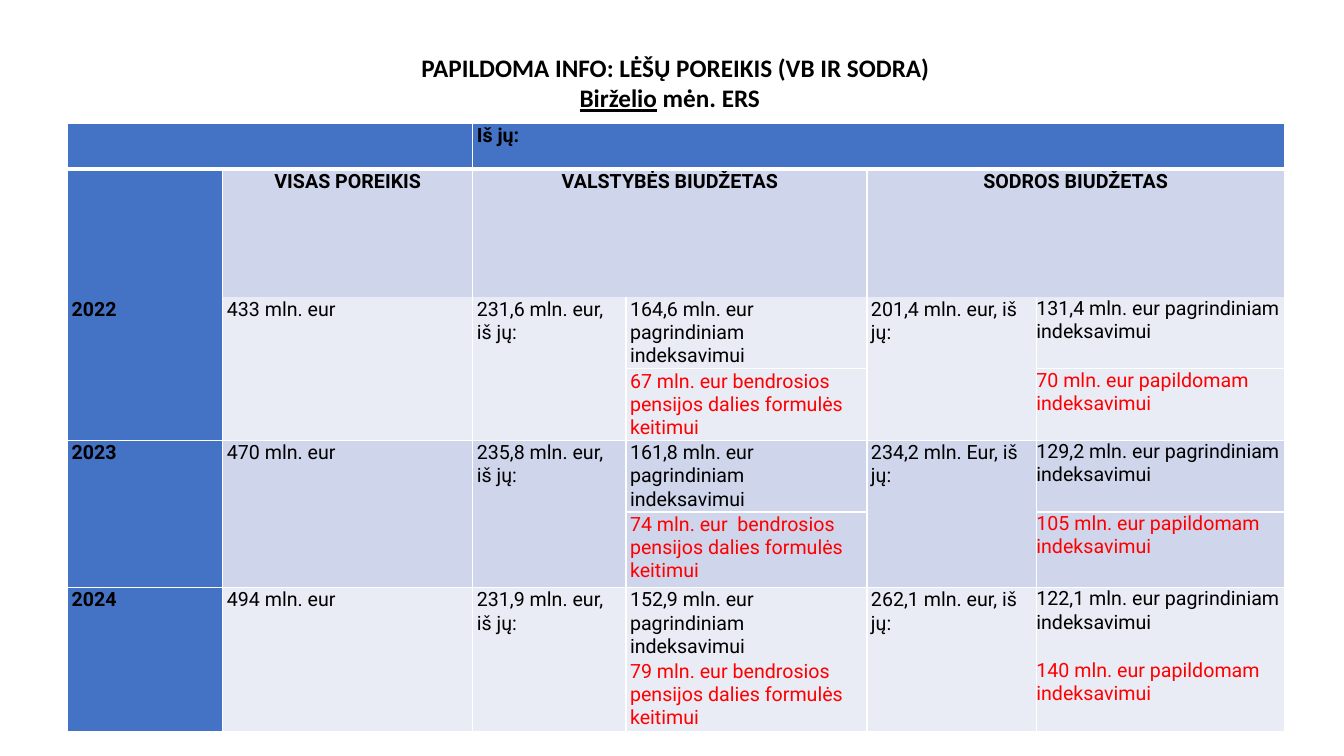
"""Build the slide on the funds needed from the state and social insurance budgets."""
from dataclasses import dataclass

from lxml.etree import SubElement
from pptx import Presentation
from pptx.dml.color import RGBColor
from pptx.enum.text import MSO_ANCHOR, MSO_AUTO_SIZE, PP_ALIGN
from pptx.oxml.ns import qn
from pptx.table import Table, _Cell
from pptx.util import Inches, Pt

BLACK = RGBColor(0x00, 0x00, 0x00)
WHITE = RGBColor(0xFF, 0xFF, 0xFF)
RED = RGBColor(0xFF, 0x00, 0x00)
BLUE = RGBColor(0x44, 0x72, 0xC4)
BAND = RGBColor(0xCF, 0xD5, 0xEA)
LIGHT = RGBColor(0xE9, 0xEB, 0xF5)

COL_WIDTHS = [1.54, 2.41, 0.07, 1.52, 2.39, 1.68, 2.46]
ROW_HEIGHTS = [0.46, 1.27, 0.71, 0.71, 0.71, 0.75, 0.71, 0.71, 0.21]
ROW_RULES = [1, 3, 0, 1, 1, 1, 1, 0, 0, 0]


@dataclass(frozen=True)
class Block:
    """A cell, or a merged group of cells, with its look."""
    row: int
    col: int
    text: str
    fill: RGBColor
    rows: int = 1
    cols: int = 1
    color: RGBColor = BLACK
    bold: bool = False
    align: PP_ALIGN = PP_ALIGN.LEFT


@dataclass(frozen=True)
class Year:
    """The amounts of one year, shown on two table rows."""
    name: str
    total: str
    state: str
    state_main: str
    state_extra: str
    social: str
    social_main: str
    social_extra: str
    fill: RGBColor


MAIN = "mln. eur pagrindiniam indeksavimui"
PENSION = "bendrosios pensijos dalies formulės keitimui"
EXTRA = "mln. eur papildomam indeksavimui"

YEARS = [
    Year("2022", "433", "231,6 mln. eur", "164,6", "67 mln. eur ",
         "201,4 mln. eur", "131,4", "70", LIGHT),
    Year("2023", "470", "235,8 mln. eur", "161,8", "74 mln. eur  ",
         "234,2 mln. Eur", "129,2", "105", BAND),
    Year("2024", "494", "231,9 mln. eur", "152,9", "79 mln. eur ",
         "262,1 mln. eur", "122,1", "140", LIGHT),
]


def header_blocks() -> list[Block]:
    """Return the two heading rows and the blank closing row."""
    heads = [(1, "VISAS POREIKIS"), (3, "VALSTYBĖS BIUDŽETAS"), (5, "SODROS BIUDŽETAS")]
    return [
        Block(0, 0, "", BLUE, cols=3),
        Block(0, 3, "Iš jų:", BLUE, cols=4, bold=True),
        Block(1, 0, "", BLUE),
        *(Block(1, col, text, BAND, cols=2, bold=True, align=PP_ALIGN.CENTER)
          for col, text in heads),
        *(Block(8, col, "", WHITE) for col in range(len(COL_WIDTHS))),
    ]


def year_blocks(row: int, year: Year) -> list[Block]:
    """Return the cells of one year, starting at the given row."""
    return [
        Block(row, 0, year.name, BLUE, rows=2, bold=True),
        Block(row, 1, f"{year.total} mln. eur", year.fill, rows=2, cols=2),
        Block(row, 3, f"{year.state}, iš jų:", year.fill, rows=2),
        Block(row, 4, f"{year.state_main} {MAIN}", year.fill),
        Block(row + 1, 4, f"{year.state_extra}{PENSION}", year.fill, color=RED),
        Block(row, 5, f"{year.social}, iš jų:", year.fill, rows=2),
        Block(row, 6, f"{year.social_main} {MAIN}", year.fill),
        Block(row + 1, 6, f"{year.social_extra} {EXTRA}", year.fill, color=RED),
    ]


def set_borders(cell: _Cell, top: int, bottom: int) -> None:
    """Draw white borders in points; a width of zero draws none."""
    tc_pr = cell._tc.get_or_add_tcPr()
    for side, width in zip("LRTB", (1, 1, top, bottom)):
        ln = SubElement(tc_pr, qn(f"a:ln{side}"), w=str(Pt(width)))
        if width:
            fill = SubElement(ln, qn("a:solidFill"))
            SubElement(fill, qn("a:srgbClr"), val=str(WHITE))
        else:
            SubElement(ln, qn("a:noFill"))


def draw_block(table: Table, block: Block) -> None:
    """Merge, fill, border and write one block."""
    end_row, end_col = block.row + block.rows, block.col + block.cols
    for row in range(block.row, end_row):
        for col in range(block.col, end_col):
            cell = table.cell(row, col)
            set_borders(cell, ROW_RULES[block.row], ROW_RULES[end_row])
            cell.fill.solid()
            cell.fill.fore_color.rgb = block.fill
    cell = table.cell(block.row, block.col)
    if block.rows * block.cols > 1:
        cell.merge(table.cell(end_row - 1, end_col - 1))
    flush = block.col == 6 or not block.text
    cell.margin_left = cell.margin_right = Inches(0 if flush else 0.04)
    cell.margin_top = Inches(0 if flush else 0.01)
    cell.margin_bottom = Inches(0)
    p = cell.text_frame.paragraphs[0]
    p.text = block.text
    p.alignment = block.align
    if not block.text:
        SubElement(p._p, qn("a:endParaRPr"), sz="1000")
    for r in p.runs:
        r.font.name = "Roboto"
        r.font.size = Pt(14)
        r.font.bold = block.bold
        r.font.color.rgb = block.color


def main() -> None:
    """Build and save the slide."""
    prs = Presentation()
    prs.slide_width, prs.slide_height = Inches(13.33), Inches(7.5)
    s = prs.slides.add_slide(prs.slide_layouts[5])

    title = s.shapes.title
    title.left, title.top = Inches(0.67), Inches(0.47)
    title.width, title.height = Inches(12.06), Inches(0.71)
    tf = title.text_frame
    tf.text = "PAPILDOMA INFO: LĖŠŲ POREIKIS (VB IR SODRA)\nBirželio"
    tf.auto_size = MSO_AUTO_SIZE.NONE
    tf.vertical_anchor = MSO_ANCHOR.TOP
    tf.paragraphs[1].runs[0].font.underline = True
    tf.paragraphs[1].add_run().text = " mėn. ERS  "
    for p in tf.paragraphs:
        p.alignment = PP_ALIGN.CENTER
        for r in p.runs:
            r.font.name = "Calibri"
            r.font.size = Pt(18)
            r.font.bold = True
            r.font.color.rgb = BLACK

    table = s.shapes.add_table(
        len(ROW_HEIGHTS), len(COL_WIDTHS), Inches(0.67), Inches(1.22),
        Inches(sum(COL_WIDTHS)), Inches(sum(ROW_HEIGHTS))).table
    table.first_row = table.horz_banding = False
    for column, width in zip(table.columns, COL_WIDTHS):
        column.width = Inches(width)
    for row, height in zip(table.rows, ROW_HEIGHTS):
        row.height = Inches(height)

    blocks = header_blocks()
    for i, year in enumerate(YEARS):
        blocks += year_blocks(2 + 2 * i, year)
    for block in blocks:
        draw_block(table, block)

    prs.save("out.pptx")


if __name__ == "__main__":
    main()
